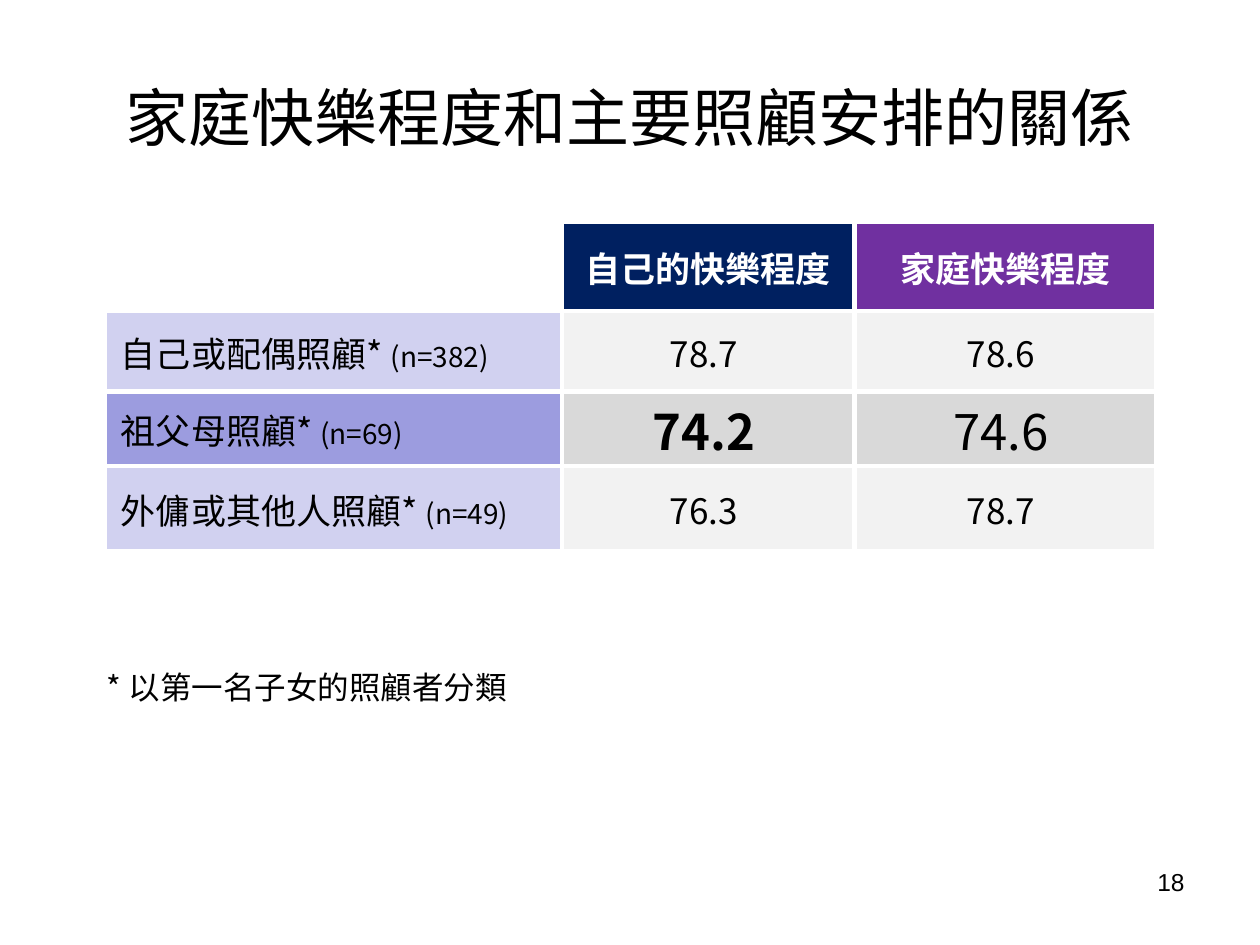
from lxml import etree
from pptx import Presentation
from pptx.dml.color import RGBColor
from pptx.enum.text import MSO_ANCHOR, PP_ALIGN
from pptx.oxml.ns import qn
from pptx.util import Inches, Pt

LEFT, CENTER, RIGHT = PP_ALIGN.LEFT, PP_ALIGN.CENTER, PP_ALIGN.RIGHT
TOP, MIDDLE = MSO_ANCHOR.TOP, MSO_ANCHOR.MIDDLE
CJK_FONT = "Noto Sans CJK SC"
COLORS = {
    "black": "000000", "white": "FFFFFF", "navy": "002060", "purple": "7030A0",
    "label": "D1D1F0", "label_strong": "9C9CDF",
    "value": "F2F2F2", "value_strong": "D9D9D9",
}
BORDER_TAGS = ("a:lnL", "a:lnR", "a:lnT", "a:lnB")
COLUMN_WIDTHS = (3.63, 2.32, 2.4)
ROW_HEIGHTS = (0.71, 0.64, 0.59, 0.68)
HEADERS = (("自己的快樂程度", "navy"), ("家庭快樂程度", "purple"))
CARE_ROWS = (
    ("自己或配偶照顧* ", "(n=382)", ("78.7", "78.6"), False),
    ("祖父母照顧* ", "(n=69)", ("74.2", "74.6"), True),
    ("外傭或其他人照顧* ", "(n=49)", ("76.3", "78.7"), False),
)


class SlideWriter:
    def __init__(self, slide, font=CJK_FONT):
        self.slide = slide
        self.font = font

    def span(self, para, text, size, color="black", bold=False, font=None):
        span = para.add_run()
        span.text = text
        span.font.size = Pt(size)
        span.font.bold = bold
        span.font.name = font or self.font
        span.font.color.rgb = RGBColor.from_string(COLORS[color])
        east_asian = etree.SubElement(span.font._element, qn("a:ea"))
        east_asian.set("typeface", font or self.font)

    def text(self, place, text, size, align=LEFT, anchor=TOP, font=None):
        box = self.slide.shapes.add_textbox(*map(Inches, place))
        frame = box.text_frame
        frame.word_wrap = True
        frame.vertical_anchor = anchor
        para = frame.paragraphs[0]
        para.alignment = align
        self.span(para, text, size, font=font)

    def table(self, left, top, widths, heights):
        frame = self.slide.shapes.add_table(
            len(heights), len(widths), Inches(left), Inches(top),
            Inches(sum(widths)), Inches(sum(heights)))
        table = frame.table
        table.horz_banding = False
        for column, width in zip(table.columns, widths):
            column.width = Inches(width)
        for row, height in zip(table.rows, heights):
            row.height = Inches(height)
        for cell in table.iter_cells():
            self.borders(cell)
            cell.fill.background()
        return table

    def borders(self, cell):
        properties = cell._tc.get_or_add_tcPr()
        for tag in BORDER_TAGS:
            line = etree.SubElement(properties, qn(tag), w=str(Pt(3)))
            fill = etree.SubElement(line, qn("a:solidFill"))
            etree.SubElement(fill, qn("a:srgbClr"), val=COLORS["white"])

    def cell(self, cell, fill, align=CENTER, left=0.01, right=0.01):
        cell.fill.solid()
        cell.fill.fore_color.rgb = RGBColor.from_string(COLORS[fill])
        cell.vertical_anchor = MIDDLE
        cell.margin_left, cell.margin_right = Inches(left), Inches(right)
        cell.margin_top, cell.margin_bottom = Inches(0.01), 0
        para = cell.text_frame.paragraphs[0]
        para.alignment = align
        return para


def main():
    deck = Presentation()
    deck.slide_width, deck.slide_height = Inches(10), Inches(7.5)
    page = SlideWriter(deck.slides.add_slide(deck.slide_layouts[6]))

    page.text((0.5, 0.3, 9, 1.25), "家庭快樂程度和主要照顧安排的關係", 36, CENTER, MIDDLE)
    page.text((7.17, 6.83, 2.33, 0.52), "18", 14, RIGHT, font="Arial")
    page.text((0.75, 5.25, 3.41, 0.4), "* 以第一名子女的照顧者分類", 18)

    table = page.table(0.83, 1.76, COLUMN_WIDTHS, ROW_HEIGHTS)
    for column, (header, fill) in enumerate(HEADERS, 1):
        para = page.cell(table.cell(0, column), fill)
        page.span(para, header, 20, "white", bold=True)

    for row, (label, count, values, strong) in enumerate(CARE_ROWS, 1):
        suffix = "_strong" if strong else ""
        para = page.cell(table.cell(row, 0), "label" + suffix, LEFT, left=0.13)
        page.span(para, label, 20)
        page.span(para, count, 16)
        for column, value in enumerate(values, 1):
            para = page.cell(table.cell(row, column), "value" + suffix, right=0.08)
            page.span(para, value, 28 if strong else 20, bold=strong and column == 1)

    deck.save("out.pptx")


if __name__ == "__main__":
    main()
